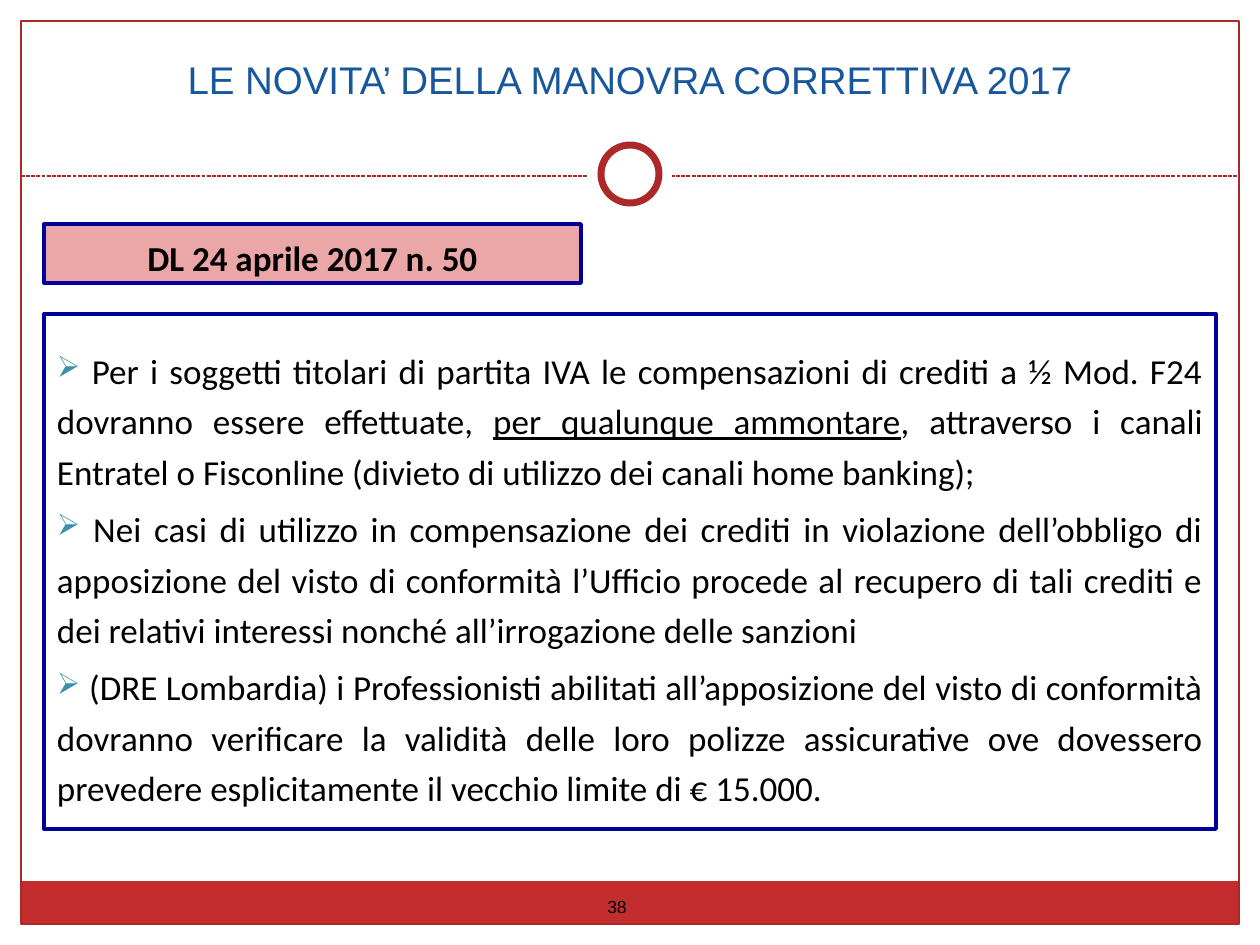
from lxml import etree
from pptx import Presentation
from pptx.dml.color import RGBColor
from pptx.enum.dml import MSO_LINE
from pptx.enum.shapes import MSO_CONNECTOR, MSO_SHAPE
from pptx.enum.text import MSO_ANCHOR, PP_ALIGN
from pptx.oxml.ns import qn
from pptx.util import Emu, Pt

RECT, OVAL = MSO_SHAPE.RECTANGLE, MSO_SHAPE.OVAL
STRAIGHT, DASH = MSO_CONNECTOR.STRAIGHT, MSO_LINE.SQUARE_DOT
TOP, MIDDLE = MSO_ANCHOR.TOP, MSO_ANCHOR.MIDDLE
CENTER, JUSTIFY = PP_ALIGN.CENTER, PP_ALIGN.JUSTIFY

EMU_PER_PX = 914400 / 126
SLIDE_W, SLIDE_H = 1260, 945
RED, BAND_RED, NAVY, PINK = "AC2829", "C32D2E", "000099", "EBA7A8"
TITLE_BLUE, BULLET_TEAL = "18579B", "3891A7"
BLACK, WHITE = "000000", "FFFFFF"

# Each point is a list of (text, underlined) runs
POINTS = [
    [(" Per i soggetti titolari di partita IVA le compensazioni di crediti a ½ Mod. F24 "
      "dovranno essere effettuate, ", False),
     ("per qualunque ammontare", True),
     (", attraverso i canali Entratel o Fisconline (divieto di utilizzo dei canali "
      "home banking);", False)],
    [(" Nei casi di utilizzo in compensazione dei crediti in violazione dell’obbligo di "
      "apposizione del visto di conformità l’Ufficio procede al recupero di tali crediti e "
      "dei relativi interessi nonché all’irrogazione delle sanzioni", False)],
    [(" (DRE Lombardia) i Professionisti abilitati all’apposizione del visto di conformità "
      "dovranno verificare la validità delle loro polizze assicurative ove dovessero "
      "prevedere esplicitamente il vecchio limite di € 15.000.", False)],
]


def px(length):
    return Emu(round(length * EMU_PER_PX))


def color(hex_value):
    return RGBColor.from_string(hex_value)


def add_panel(slide, kind, box, fill=None, line=None, width=0.75):
    panel = slide.shapes.add_shape(kind, *map(px, box))
    panel.shadow.inherit = False
    if fill:
        panel.fill.solid()
        panel.fill.fore_color.rgb = color(fill)
    else:
        panel.fill.background()
    if line:
        panel.line.color.rgb = color(line)
        panel.line.width = Pt(width)
    else:
        panel.line.fill.background()
    return panel


def set_frame(frame, anchor, top_inset=6):
    frame.word_wrap = True
    frame.vertical_anchor = anchor
    frame.margin_left = frame.margin_right = px(13)
    frame.margin_top, frame.margin_bottom = px(top_inset), px(6)


def add_run(paragraph, text, font, size, ink, bold=False, underline=False):
    run = paragraph.add_run()
    run.text = text
    run.font.name, run.font.size = font, Pt(size)
    run.font.bold, run.font.underline = bold, underline
    run.font.color.rgb = color(ink)


def add_arrow_bullet(paragraph):
    properties = paragraph._p.get_or_add_pPr()
    properties.set("marL", "0")
    properties.set("indent", "0")
    tint = etree.SubElement(properties, qn("a:buClr"))
    etree.SubElement(tint, qn("a:srgbClr"), val=BULLET_TEAL)
    etree.SubElement(properties, qn("a:buSzPct"), val="85000")
    etree.SubElement(properties, qn("a:buChar"), char="➢")


def draw_border(slide, box):
    left, top, width, height = box
    # Footer band and outer border
    band_h = 43
    add_panel(slide, RECT, (left, top + height - band_h, width, band_h), BAND_RED)
    add_panel(slide, RECT, box, line=RED)
    # Dashed divider
    divider_y = top + 155
    divider = slide.shapes.add_connector(
        STRAIGHT, px(left), px(divider_y), px(left + width), px(divider_y))
    divider.line.color.rgb = color(RED)
    divider.line.width = Pt(0.75)
    divider.line.dash_style = DASH
    etree.SubElement(divider._element.spPr, qn("a:effectLst"))
    # Ring on a white disc that interrupts the divider
    center_x, center_y = left + width / 2, top + 153
    for size, ring in ((84, None), (58, RED)):
        add_panel(slide, OVAL, (center_x - size / 2, center_y - size / 2, size, size),
                  WHITE, ring, 4)


def draw_title(slide, box):
    title = slide.shapes.title
    title.left, title.top, title.width, title.height = map(px, box)
    set_frame(title.text_frame, TOP, 11)
    paragraph = title.text_frame.paragraphs[0]
    paragraph.alignment = CENTER
    add_run(paragraph, "LE NOVITA’ DELLA MANOVRA CORRETTIVA 2017", "Arial", 22, TITLE_BLUE)


def draw_decree(slide, box):
    decree = add_panel(slide, RECT, box, PINK, NAVY, 2.25)
    set_frame(decree.text_frame, MIDDLE)
    paragraph = decree.text_frame.paragraphs[0]
    paragraph.alignment = CENTER
    paragraph.line_spacing = 1.2
    add_run(paragraph, "DL 24 aprile 2017 n. 50", "Calibri", 20, BLACK, bold=True)


def draw_points(slide, box):
    frame = add_panel(slide, RECT, box, line=NAVY, width=2.25).text_frame
    set_frame(frame, MIDDLE, 13)
    for number, runs in enumerate(POINTS):
        paragraph = frame.add_paragraph() if number else frame.paragraphs[0]
        paragraph.alignment = JUSTIFY
        paragraph.line_spacing = 1.2
        paragraph.space_before = Pt(4 if number else 0)
        add_arrow_bullet(paragraph)
        for text, underlined in runs:
            add_run(paragraph, text, "Calibri", 20, BLACK, underline=underlined)


def draw_page_number(slide, box):
    frame = slide.shapes.add_textbox(*map(px, box)).text_frame
    set_frame(frame, MIDDLE)
    paragraph = frame.paragraphs[0]
    paragraph.alignment = CENTER
    add_run(paragraph, "38", "Arial", 10, BLACK)


def main():
    deck = Presentation()
    deck.slide_width, deck.slide_height = px(SLIDE_W), px(SLIDE_H)
    slide = deck.slides.add_slide(deck.slide_layouts[5])
    margin, inset = 21, 44
    content_w = SLIDE_W - 2 * inset
    draw_border(slide, (margin, margin, SLIDE_W - 2 * margin, SLIDE_H - 2 * margin))
    draw_points(slide, (inset, 314, content_w, 515))
    draw_page_number(slide, (591, 890, 52, 33))
    draw_decree(slide, (inset, 224, 537, 59))
    draw_title(slide, (inset, 45, content_w, 69))
    deck.save("out.pptx")


if __name__ == "__main__":
    main()
